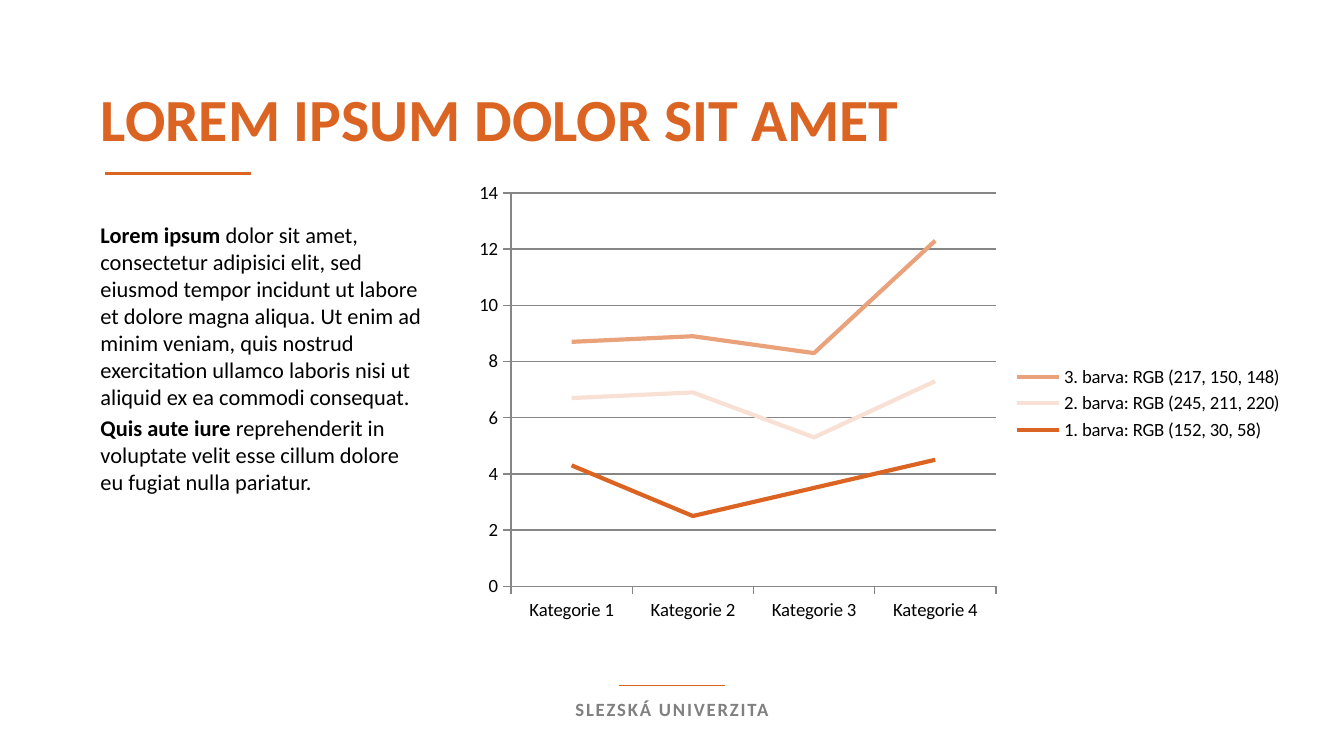
from lxml.etree import SubElement
from pptx import Presentation
from pptx.chart.data import CategoryChartData
from pptx.dml.color import RGBColor
from pptx.enum.chart import XL_CHART_TYPE as ChartType, XL_LEGEND_POSITION as LegendPosition
from pptx.enum.chart import XL_TICK_MARK as TickMark
from pptx.enum.shapes import MSO_CONNECTOR as Connector
from pptx.enum.text import MSO_ANCHOR as Anchor, MSO_AUTO_SIZE as AutoSize, PP_ALIGN as Align
from pptx.oxml.ns import qn
from pptx.util import Cm, Pt

FONT = "Calibri"
ORANGE = "DC6423"
BLACK = "000000"
GRAY = "808080"
GRID = "868686"

CATEGORIES = [f"Kategorie {number}" for number in range(1, 5)]
SERIES = [
    ("1. barva: RGB (152, 30, 58)", (4.3, 2.5, 3.5, 4.5), ORANGE),
    ("2. barva: RGB (245, 211, 220)", (2.4, 4.4, 1.8, 2.8), "F8E1D4"),
    ("3. barva: RGB (217, 150, 148)", (2, 2, 3, 5), "EAA27A"),
]
PLOT_AREA = {"x": 0.06, "y": 0.04, "w": 0.58, "h": 0.86}
PARAGRAPHS = [
    ("Lorem ipsum ",
     "dolor sit amet, consectetur adipisici elit, sed eiusmod tempor incidunt ut labore "
     "et dolore magna aliqua. Ut enim ad minim veniam, quis nostrud exercitation ullamco "
     "laboris nisi ut aliquid ex ea commodi consequat."),
    ("Quis aute iure ",
     "reprehenderit in voluptate velit esse cillum dolore\veu fugiat nulla pariatur."),
]


def color(value):
    return RGBColor.from_string(value)


def style_font(font, size, value, bold=False):
    font.name = FONT
    font.size = Pt(size)
    font.bold = bold
    font.color.rgb = color(value)


def style_line(line, value, width):
    line.color.rgb = color(value)
    line.width = Pt(width)


def add_run(para, text, size, value, bold=False):
    for index, part in enumerate(text.split("\v")):
        if index:
            para.add_line_break()
        span = para.add_run()
        span.text = part
        style_font(span.font, size, value, bold)
    return span


def add_title(page, text):
    title = page.shapes.title
    title.left, title.top, title.width, title.height = Cm(1.65), Cm(1.3), Cm(17.45), Cm(1.85)
    frame = title.text_frame
    frame.auto_size = AutoSize.NONE
    frame.vertical_anchor = Anchor.MIDDLE
    para = frame.paragraphs[0]
    para.alignment = Align.LEFT
    add_run(para, text, 32, ORANGE, True)


def add_body(page):
    box = page.shapes.add_textbox(Cm(1.65), Cm(4.06), Cm(6.83), Cm(6.68))
    frame = box.text_frame
    frame.word_wrap = True
    for index, (lead, rest) in enumerate(PARAGRAPHS):
        para = frame.add_paragraph() if index else frame.paragraphs[0]
        para.space_before = Pt(2.4 if index else 0)
        add_run(para, lead, 12, BLACK, True)
        add_run(para, rest, 12, BLACK)


def add_rule(page, left, top, width, weight):
    rule = page.shapes.add_connector(Connector.STRAIGHT, left, top, left + width, top)
    style_line(rule.line, ORANGE, weight)
    SubElement(rule.element.spPr, qn("a:effectLst"))


def add_footer(page, text):
    add_rule(page, Cm(11.7), Cm(12.95), Cm(2), 0.75)
    box = page.shapes.add_textbox(Cm(10.57), Cm(13.06), Cm(4.26), Cm(0.68))
    frame = box.text_frame
    frame.word_wrap = False
    frame.auto_size = AutoSize.SHAPE_TO_FIT_TEXT
    para = frame.paragraphs[0]
    para.alignment = Align.CENTER
    span = add_run(para, text, 10, GRAY, True)
    span.font._element.set("spc", "100")


def style_axis(axis):
    axis.major_tick_mark = TickMark.OUTSIDE
    axis.minor_tick_mark = TickMark.NONE
    style_font(axis.tick_labels.font, 10, BLACK)
    style_line(axis.format.line, GRID, 0.75)


def place_plot(chart):
    plot_area = chart._chartSpace.chart.plotArea
    for old in plot_area.findall(qn("c:layout")):
        plot_area.remove(old)
    layout = SubElement(plot_area, qn("c:layout"))
    plot_area.insert(0, layout)
    manual = SubElement(layout, qn("c:manualLayout"))
    settings = {"layoutTarget": "inner", "xMode": "edge", "yMode": "edge", **PLOT_AREA}
    for name, value in settings.items():
        SubElement(manual, qn(f"c:{name}")).set("val", str(value))


def add_line_chart(page):
    data = CategoryChartData()
    data.categories = CATEGORIES
    for name, values, _ in SERIES:
        data.add_series(name, values)
    chart = page.shapes.add_chart(
        ChartType.LINE_STACKED, Cm(8.71), Cm(3.3), Cm(15.8), Cm(8.64), data).chart
    chart.has_title = False
    style_font(chart.font, 14, BLACK)
    chart.plots[0].vary_by_categories = False
    for series, (_, _, value) in zip(chart.plots[0].series, SERIES):
        series.smooth = False
        style_line(series.format.line, value, 2.25)

    style_axis(chart.category_axis)
    axis = chart.value_axis
    style_axis(axis)
    axis.minimum_scale, axis.maximum_scale, axis.major_unit = 0, 14, 2
    axis.has_major_gridlines = True
    style_line(axis.major_gridlines.format.line, GRID, 0.75)

    chart.has_legend = True
    chart.legend.position = LegendPosition.RIGHT
    chart.legend.include_in_layout = False
    style_font(chart.legend.font, 10, BLACK)
    place_plot(chart)


def main():
    deck = Presentation()
    deck.slide_width, deck.slide_height = Cm(25.4), Cm(14.28)
    page = deck.slides.add_slide(deck.slide_layouts[5])
    add_title(page, "LOREM IPSUM DOLOR SIT AMET")
    add_body(page)
    add_line_chart(page)
    add_rule(page, Cm(1.98), Cm(3.28), Cm(2.77), 1.5)
    add_footer(page, "SLEZSKÁ UNIVERZITA")
    deck.save("out.pptx")


if __name__ == "__main__":
    main()
